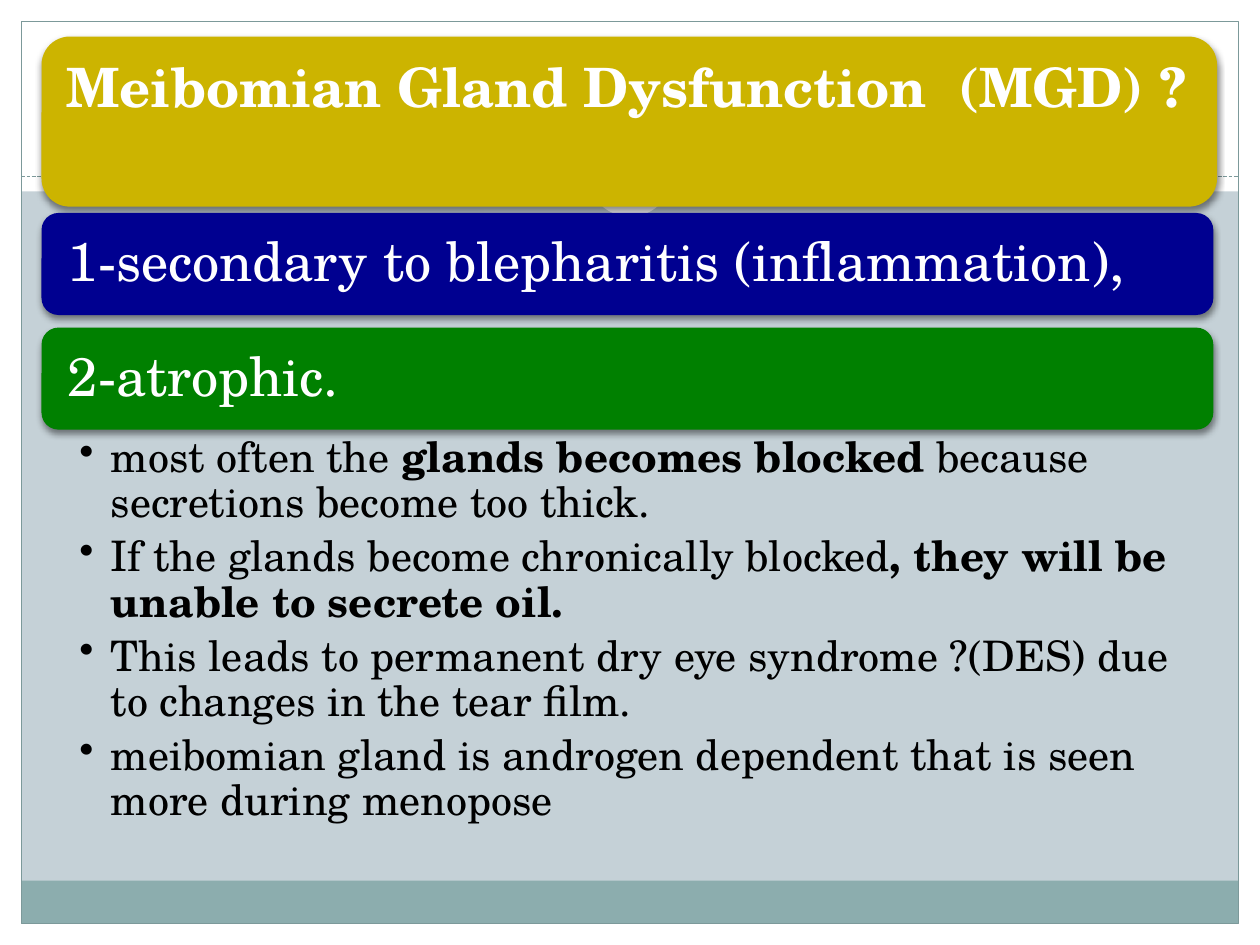
from lxml.etree import SubElement
from pptx import Presentation
from pptx.dml.color import RGBColor
from pptx.enum.dml import MSO_LINE
from pptx.enum.shapes import MSO_CONNECTOR, MSO_SHAPE
from pptx.enum.text import MSO_ANCHOR, MSO_AUTO_SIZE, PP_ALIGN
from pptx.oxml import parse_xml
from pptx.oxml.ns import nsdecls, qn
from pptx.util import Inches, Pt

FONT = "TeX Gyre Schola"
WIDTH, HEIGHT, MARGIN = 10, 7.5, 0.17
HEADER, RULE, DOT = 1.52, 1.4, 0.67
LEFT, BAR_WIDTH, BAR_HEIGHT = 0.33, 9.3, 0.81
BAR_TOP, BAR_STEP = 1.69, 0.91
INSET = 0.13

TITLE = "Meibomian Gland Dysfunction  (MGD) ?"
CAUSES = [
    ("1-secondary to blepharitis (inflammation),", "000090"),
    ("2-atrophic.", "008000"),
]
NOTES = [
    [("most often the ", False), ("glands becomes blocked ", True),
     ("because secretions become too thick.", False)],
    [("If the glands become chronically blocked", False),
     (", they will be unable to secrete oil.", True)],
    [("This leads to permanent dry eye syndrome ?(DES) due to changes in the tear film.", False)],
    [("meibomian gland is androgen dependent that is seen more during menopose", False)],
]
FRAME_PARTS = [
    (0, HEIGHT - MARGIN, WIDTH, MARGIN, "FFFFFF"),
    (0, 0, WIDTH, HEADER, "FFFFFF"),
    (0, 0, MARGIN, HEIGHT, "FFFFFF"),
    (WIDTH - MARGIN, 0, MARGIN, HEIGHT, "FFFFFF"),
    (MARGIN, 6.99, WIDTH - 2 * MARGIN, 0.34, "8CADAE"),
]
SHADOW = (
    f'<a:effectLst {nsdecls("a")}><a:outerShdw blurRad="50800" dist="25400" dir="5400000" '
    'rotWithShape="0"><a:srgbClr val="000000"><a:alpha val="45000"/></a:srgbClr>'
    '</a:outerShdw></a:effectLst>'
)


def paint(target, color):
    if hasattr(target, "solid"):
        target.solid()
        target = target.fore_color
    else:
        target = target.color
    target.rgb = RGBColor.from_string(color)


def add_block(page, kind, left, top, width, height, color):
    block = page.shapes.add_shape(kind, Inches(left), Inches(top), Inches(width), Inches(height))
    block.shadow.inherit = False
    block.line.fill.background()
    paint(block.fill, color)
    return block


def add_bar(page, top, width, height, color):
    bar = add_block(page, MSO_SHAPE.ROUNDED_RECTANGLE, LEFT, top, width, height, color)
    properties = bar._element.spPr
    properties.remove(properties.find(qn("a:effectLst")))
    properties.append(parse_xml(SHADOW))
    return bar


def set_frame(frame, anchor, left, top, right, bottom):
    frame.word_wrap = True
    frame.auto_size = MSO_AUTO_SIZE.NONE
    frame.vertical_anchor = anchor
    frame.margin_left, frame.margin_right = Inches(left), Inches(right)
    frame.margin_top, frame.margin_bottom = Inches(top), Inches(bottom)


def style(para, size, color, bold=None):
    para.alignment = PP_ALIGN.LEFT
    para.line_spacing = 0.9
    para.font.name, para.font.size, para.font.bold = FONT, Pt(size), bold
    paint(para.font.fill, color)


def add_frame(page):
    for part in FRAME_PARTS:
        add_block(page, MSO_SHAPE.RECTANGLE, *part)
    border = add_block(page, MSO_SHAPE.RECTANGLE, MARGIN, MARGIN,
                       WIDTH - 2 * MARGIN, HEIGHT - 2 * MARGIN, "FFFFFF")
    border.fill.background()
    rule = page.shapes.add_connector(MSO_CONNECTOR.STRAIGHT, Inches(MARGIN), Inches(RULE),
                                     Inches(WIDTH - MARGIN), Inches(RULE))
    SubElement(rule._element.spPr, qn("a:effectLst"))
    for outline in (border.line, rule.line):
        paint(outline.fill, "7C999A")
        outline.width = Pt(0.75)
    rule.line.dash_style = MSO_LINE.SQUARE_DOT
    add_block(page, MSO_SHAPE.OVAL, (WIDTH - DOT) / 2, 1.05, DOT, DOT, "FFFFFF")


def add_title(page):
    add_bar(page, 0.29, 9.33, 1.35, "CCB400")
    title = page.shapes.title
    title.left, title.top, title.width, title.height = map(Inches, (0.4, 0.35, 9.2, 1.22))
    title.text_frame.text = TITLE
    set_frame(title.text_frame, MSO_ANCHOR.TOP, INSET, INSET, 0.1, INSET)
    style(title.text_frame.paragraphs[0], 31, "FFFFFF", True)
    page.shapes._spTree.append(title._element)


def add_causes(page):
    for row, (text, color) in enumerate(CAUSES):
        bar = add_bar(page, BAR_TOP + row * BAR_STEP, BAR_WIDTH, BAR_HEIGHT, color)
        bar.text_frame.text = text
        set_frame(bar.text_frame, MSO_ANCHOR.MIDDLE, 0.17, INSET, 0.17, INSET)
        style(bar.text_frame.paragraphs[0], 31, "FFFFFF")


def add_notes(page):
    top = BAR_TOP + len(CAUSES) * BAR_STEP - 0.09
    box = page.shapes.add_textbox(Inches(LEFT), Inches(top), Inches(BAR_WIDTH), Inches(3.23))
    frame = box.text_frame
    set_frame(frame, MSO_ANCHOR.TOP, 0.3, 0.04, 0.24, 0.04)
    for index, note in enumerate(NOTES):
        para = frame.add_paragraph() if index else frame.paragraphs[0]
        style(para, 24, "000000")
        para.space_after = Pt(5)
        properties = para._p.get_or_add_pPr()
        properties.set("marL", str(Inches(0.25)))
        properties.set("indent", str(Inches(-0.25)))
        bullet = parse_xml(f'<a:buChar {nsdecls("a")} char="•"/>')
        properties.find(qn("a:defRPr")).addprevious(bullet)
        for text, bold in note:
            span = para.add_run()
            span.text, span.font.bold = text, bold


def main():
    """Build the gland dysfunction slide."""
    deck = Presentation()
    deck.slide_width, deck.slide_height = Inches(WIDTH), Inches(HEIGHT)
    page = deck.slides.add_slide(deck.slide_layouts[5])
    paint(page.background.fill, "C5D1D7")
    add_frame(page)
    add_title(page)
    add_causes(page)
    add_notes(page)
    deck.save("out.pptx")


if __name__ == "__main__":
    main()
